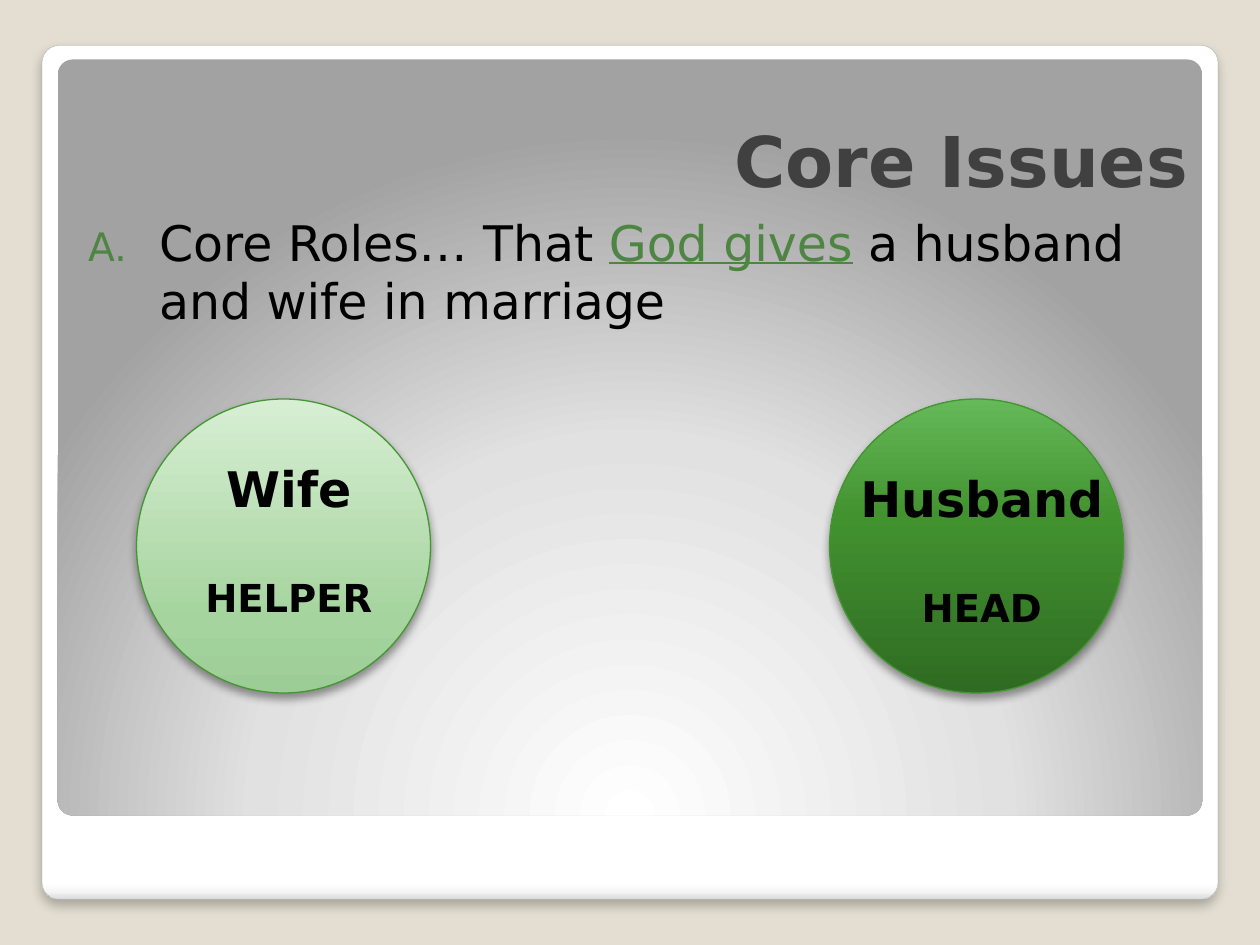
"""Build the Core Issues slide with its two role circles."""
from dataclasses import dataclass
from typing import Optional

import pptx
import pptx.dml.color
import pptx.enum.shapes
import pptx.enum.text
import pptx.oxml
import pptx.oxml.ns
import pptx.util
from lxml import etree

Pt = pptx.util.Pt
RGBColor = pptx.dml.color.RGBColor
Kind = pptx.enum.shapes.MSO_SHAPE
Align = pptx.enum.text.PP_ALIGN
Anchor = pptx.enum.text.MSO_ANCHOR
AutoSize = pptx.enum.text.MSO_AUTO_SIZE

FONT = "DejaVu Sans"
BLACK = RGBColor(0x00, 0x00, 0x00)
WHITE = RGBColor(0xFF, 0xFF, 0xFF)
SAND = RGBColor(0xE3, 0xDE, 0xD1)
CHARCOAL = RGBColor(0x40, 0x40, 0x40)
FRAME_LINE = RGBColor(0xA4, 0xA4, 0xA4)
FRAME_NEAR_EDGE = RGBColor(0xF7, 0xF7, 0xF7)
FRAME_EDGE = RGBColor(0xDA, 0xDA, 0xDA)
PANEL_MIDDLE = RGBColor(0xE1, 0xE1, 0xE1)
PANEL_EDGE = RGBColor(0xA2, 0xA2, 0xA2)
ACCENT = RGBColor(0x4E, 0x85, 0x42)
CIRCLE_LINE = RGBColor(0x43, 0x96, 0x31)
PALE_GREENS = (RGBColor(0x9D, 0xCD, 0x96), RGBColor(0xA5, 0xD4, 0x9E), RGBColor(0xD7, 0xEE, 0xD3))
DEEP_GREENS = (RGBColor(0x2F, 0x6B, 0x22), RGBColor(0x42, 0x92, 0x30), RGBColor(0x66, 0xB9, 0x59))


@dataclass(frozen=True)
class Box:
    """A rectangle in points."""
    left: float
    top: float
    width: float
    height: float

    def lengths(self) -> tuple:
        """Return the four lengths for python-pptx."""
        return tuple(Pt(value) for value in (self.left, self.top, self.width, self.height))


@dataclass(frozen=True)
class Gradient:
    """Stops as percent and colour, with a linear angle or a circular focus."""
    stops: tuple
    angle: int = 90
    focus: Optional[tuple] = None


@dataclass(frozen=True)
class Shadow:
    """A downward shadow."""
    opacity: int
    blur: float
    distance: float


@dataclass(frozen=True)
class Role:
    """A circle with a person and a role."""
    person: str
    duty: str
    left: float
    gradient: Gradient
    label: Box


FRAME_GRADIENT = Gradient(((0, WHITE), (98, WHITE), (99, FRAME_NEAR_EDGE), (100, FRAME_EDGE)))
PANEL_GRADIENT = Gradient(((0, WHITE), (55, PANEL_MIDDLE), (100, PANEL_EDGE)), focus=(50, 175, 50, -75))
ROLES = (
    Role("Wife", "HELPER", 78, Gradient(tuple(zip((0, 25, 100), PALE_GREENS)), 270),
         Box(96, 258.5, 138, 101.5)),
    Role("Husband", "HEAD", 474, Gradient(tuple(zip((0, 60, 100), DEEP_GREENS)), 270),
         Box(480, 264, 162, 101.5)),
)


def add_child(parent, tag: str, **attributes):
    """Append a drawing element and return it."""
    values = {name: str(value) for name, value in attributes.items()}
    return etree.SubElement(parent, pptx.oxml.ns.qn(f"a:{tag}"), values)


def apply_gradient(shape, gradient: Gradient) -> None:
    """Fill a shape with a gradient."""
    properties = shape.element.spPr
    fill = add_child(properties, "gradFill", rotWithShape=1)
    stops = add_child(fill, "gsLst")
    for percent, color in gradient.stops:
        add_child(add_child(stops, "gs", pos=percent * 1000), "srgbClr", val=color)
    if gradient.focus:
        route = add_child(fill, "path", path="circle")
        edges = {side: value * 1000 for side, value in zip("ltrb", gradient.focus)}
        add_child(route, "fillToRect", **edges)
    else:
        add_child(fill, "lin", ang=gradient.angle * 60000, scaled=0)
    properties.find(pptx.oxml.ns.qn("a:prstGeom")).addnext(fill)


def apply_shadow(shape, shadow: Shadow) -> None:
    """Give a shape a black shadow below it."""
    effects = shape.element.spPr.find(pptx.oxml.ns.qn("a:effectLst"))
    outer = add_child(effects, "outerShdw", blurRad=int(Pt(shadow.blur)), dist=int(Pt(shadow.distance)),
                      dir=90 * 60000, algn="ctr", rotWithShape=0)
    add_child(add_child(outer, "srgbClr", val=BLACK), "alpha", val=shadow.opacity * 1000)


def draw_shape(slide, kind, box: Box, gradient: Gradient, line: Optional[RGBColor] = None,
               weight: float = 0, shadow: Optional[Shadow] = None):
    """Draw a gradient shape with an optional outline and shadow."""
    shape = slide.shapes.add_shape(kind, *box.lengths())
    if line is None:
        shape.line.fill.background()
    else:
        shape.line.color.rgb = line
        shape.line.width = Pt(weight)
    shape.shadow.inherit = False
    apply_gradient(shape, gradient)
    if shadow:
        apply_shadow(shape, shadow)
    return shape


def format_span(span, size: float, color: RGBColor = BLACK, bold: bool = False) -> None:
    """Set the font of a run."""
    span.font.name = FONT
    span.font.size = Pt(size)
    span.font.bold = bold
    span.font.color.rgb = color


def draw_title(slide, text: str, box: Box) -> None:
    """Place the title in front of the panels."""
    title = slide.shapes.title
    title.left, title.top, title.width, title.height = box.lengths()
    frame = title.text_frame
    frame.text = text
    frame.vertical_anchor = Anchor.BOTTOM
    frame.auto_size = AutoSize.NONE
    para = frame.paragraphs[0]
    para.alignment = Align.RIGHT
    format_span(para.runs[0], 40, CHARCOAL, True)
    slide.shapes[-1].element.addnext(title.element)


def draw_statement(slide, box: Box) -> None:
    """Draw the lettered statement."""
    frame = slide.shapes.add_textbox(*box.lengths()).text_frame
    frame.word_wrap = True
    frame.margin_left, frame.margin_top = Pt(14.4), Pt(7.2)
    para = frame.paragraphs[0]
    para.space_before = Pt(2.5)
    for text, color in (("Core Roles… That ", BLACK), ("God gives", ACCENT),
                        (" a husband and wife in marriage", BLACK)):
        span = para.add_run()
        span.text = text
        format_span(span, 28, color)
        span.font.underline = color == ACCENT
    settings = para._p.get_or_add_pPr()
    settings.set("marL", str(int(Pt(40.5))))
    settings.set("indent", str(int(Pt(-40.5))))
    add_child(add_child(settings, "buClr"), "srgbClr", val=ACCENT)
    add_child(settings, "buSzPct", val=80000)
    add_child(settings, "buFont", typeface=FONT)
    add_child(settings, "buAutoNum", type="alphaUcPeriod")


def draw_label(slide, role: Role) -> None:
    """Write the person and the duty over a circle."""
    frame = slide.shapes.add_textbox(*role.label.lengths()).text_frame
    frame.word_wrap = True
    frame.auto_size = AutoSize.SHAPE_TO_FIT_TEXT
    frame.text = f"{role.person}\n{role.duty}"
    for para, size in zip(frame.paragraphs, (28, 22)):
        para.alignment = Align.CENTER
        format_span(para.runs[0], size, bold=True)
    frame.paragraphs[1].space_before = Pt(32.6)


def main() -> None:
    """Build and save the deck."""
    deck = pptx.Presentation()
    deck.slide_width, deck.slide_height = Pt(720), Pt(540)
    slide = deck.slides.add_slide(deck.slide_layouts.get_by_name("Title Only"))
    slide.background.fill.solid()
    slide.background.fill.fore_color.rgb = SAND
    frame = draw_shape(slide, Kind.ROUNDED_RECTANGLE, Box(24, 26, 672, 488), FRAME_GRADIENT,
                       FRAME_LINE, 0.16, Shadow(25, 6, 4))
    panel = draw_shape(slide, Kind.ROUNDED_RECTANGLE, Box(33, 34, 654, 432), PANEL_GRADIENT)
    for shape in (frame, panel):
        shape.adjustments[0] = 0.02
    draw_title(slide, "Core Issues", Box(42, 36, 644, 83))
    draw_statement(slide, Box(36, 114, 644, 378))
    for role in ROLES:
        draw_shape(slide, Kind.OVAL, Box(role.left, 228, 168, 168), role.gradient,
                   CIRCLE_LINE, 0.75, Shadow(40, 5.2, 3))
    for role in ROLES:
        draw_label(slide, role)
    deck.save("out.pptx")


if __name__ == "__main__":
    main()
